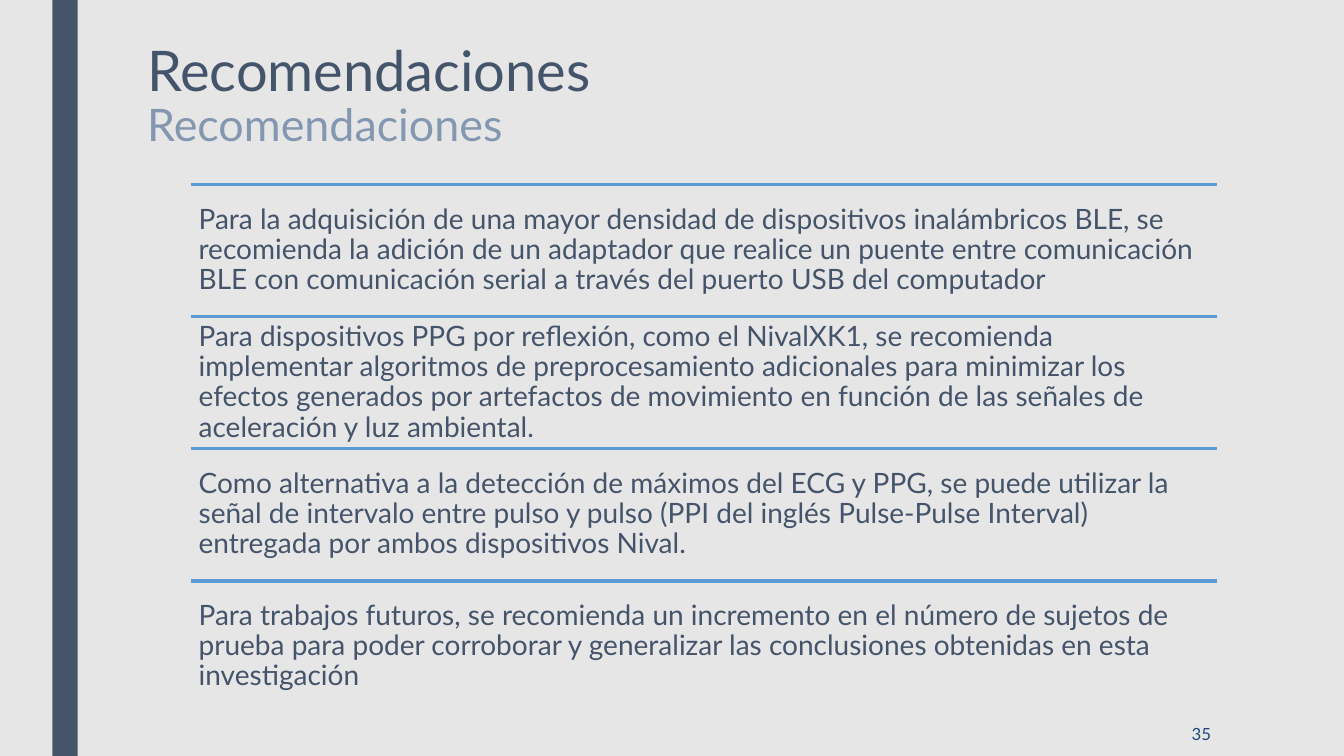
from pptx import Presentation
from pptx.dml.color import RGBColor as Rgb
from pptx.enum.shapes import MSO_CONNECTOR as Conn, MSO_SHAPE as Form
from pptx.enum.text import MSO_ANCHOR as Anchor, MSO_AUTO_SIZE as Fit, PP_ALIGN as Align
from pptx.oxml.ns import qn
from pptx.util import Inches, Pt
from lxml import etree

COLORS = {"back": "E7E6E6", "dark": "44546A", "soft": "8497B0",
          "rule": "5B9BD5", "page": "1F497D"}

ITEMS = [
    "Para la adquisición de una mayor densidad de dispositivos inalámbricos BLE, "
    "se recomienda la adición de un adaptador que realice un puente entre "
    "comunicación BLE con comunicación serial a través del puerto USB del computador",
    "Para dispositivos PPG por reflexión, como el NivalXK1, se recomienda "
    "implementar algoritmos de preprocesamiento adicionales para minimizar los "
    "efectos generados por artefactos de movimiento en función de las señales de "
    "aceleración y luz ambiental.",
    "Como alternativa a la detección de máximos del ECG y PPG, se puede utilizar la "
    "señal de intervalo entre pulso y pulso (PPI del inglés Pulse-Pulse Interval) "
    "entregada por ambos dispositivos Nival.",
    "Para trabajos futuros, se recomienda un incremento en el número de sujetos de "
    "prueba para poder corroborar y generalizar las conclusiones obtenidas en esta "
    "investigación",
]


class Deck:
    font = "Lato"

    def __init__(self, slide):
        self.slide = slide
        fill = slide.background.fill
        fill.solid()
        fill.fore_color.rgb = self.color("back")

    def color(self, name):
        return Rgb.from_string(COLORS[name])

    def run(self, para, text, size, color):
        run = para.add_run()
        run.text = text
        run.font.name = self.font
        run.font.size = Pt(size)
        run.font.color.rgb = self.color(color)

    def bar(self, x, y, w, h, color):
        bar = self.slide.shapes.add_shape(
            Form.RECTANGLE, Inches(x), Inches(y), Inches(w), Inches(h))
        bar.shadow.inherit = False
        bar.fill.solid()
        bar.fill.fore_color.rgb = self.color(color)
        bar.line.fill.background()

    def title(self, x, y, w, h, main, sub):
        title = self.slide.shapes.title
        title.left, title.top = Inches(x), Inches(y)
        title.width, title.height = Inches(w), Inches(h)
        frame = title.text_frame
        frame.word_wrap = True
        frame.auto_size = Fit.NONE
        frame.vertical_anchor = Anchor.TOP
        para = frame.paragraphs[0]
        para.alignment = Align.LEFT
        para.line_spacing = 0.89
        self.run(para, main, 40, "dark")
        para.add_line_break()
        self.run(para, sub, 32, "soft")

    def rule(self, x, y, w):
        rule = self.slide.shapes.add_connector(
            Conn.STRAIGHT, Inches(x), Inches(y), Inches(x + w), Inches(y))
        rule.line.color.rgb = self.color("rule")
        rule.line.width = Pt(2.75)
        etree.SubElement(rule._element.spPr, qn("a:effectLst"))

    def text(self, x, y, w, h, text, size, color, align=Align.LEFT, pad=0.08, space=0.9):
        box = self.slide.shapes.add_textbox(Inches(x), Inches(y), Inches(w), Inches(h))
        frame = box.text_frame
        frame.word_wrap = True
        frame.vertical_anchor = Anchor.MIDDLE
        frame.margin_left = frame.margin_right = Inches(pad)
        frame.margin_top = frame.margin_bottom = Inches(0.08)
        para = frame.paragraphs[0]
        para.alignment = align
        para.line_spacing = space
        self.run(para, text, size, color)


def main():
    prs = Presentation()
    prs.slide_width, prs.slide_height = Inches(13.33), Inches(7.5)
    deck = Deck(prs.slides.add_slide(prs.slide_layouts[5]))

    # Side bar and title
    deck.bar(0.52, 0, 0.25, 7.5, "dark")
    deck.title(1.36, 0.38, 10.5, 1.62, "Recomendaciones", "Recomendaciones")

    # Page number
    deck.text(10.36, 7.06, 1.75, 0.44, "35", 12, "page", Align.RIGHT, 0.1, 1.0)

    # Ruled list of advice
    left, top, width, step = 1.89, 1.83, 10.18, 1.31
    for i, item in enumerate(ITEMS):
        y = top + i * step
        deck.rule(left, y, width)
        deck.text(left, y, width, step, item, 20, "dark")

    prs.save("out.pptx")


if __name__ == "__main__":
    main()
